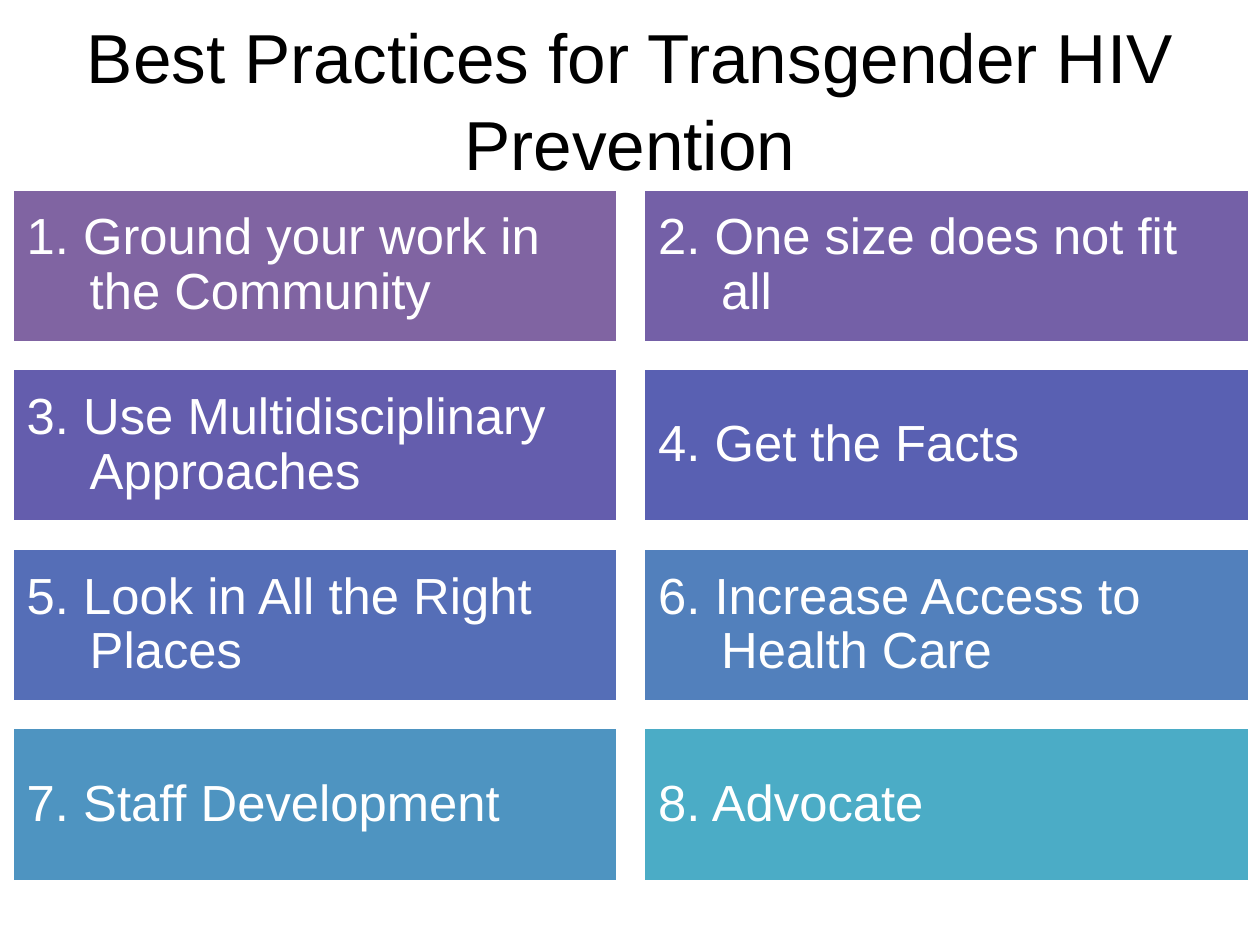
from dataclasses import dataclass

from pptx import Presentation
from pptx.dml.color import RGBColor
from pptx.enum.shapes import MSO_SHAPE
from pptx.enum.text import MSO_ANCHOR, MSO_AUTO_SIZE, PP_ALIGN
from pptx.slide import Slide
from pptx.util import Cm, Pt

RECTANGLE = MSO_SHAPE.RECTANGLE
MIDDLE = MSO_ANCHOR.MIDDLE
NO_AUTOFIT = MSO_AUTO_SIZE.NONE
CENTER, LEFT = PP_ALIGN.CENTER, PP_ALIGN.LEFT

COLORS = {
    "title": "000000",
    "white": "FFFFFF",
    "community": "8064A2",
    "size": "7460A7",
    "approaches": "645DAD",
    "facts": "5960B2",
    "places": "556EB7",
    "access": "5280BC",
    "staff": "4E94C1",
    "advocate": "4BACC6",
}

PRACTICES = [
    ("1. Ground your work in the Community", "community"),
    ("2. One size does not fit all", "size"),
    ("3. Use Multidisciplinary Approaches", "approaches"),
    ("4. Get the Facts", "facts"),
    ("5. Look in All the Right Places", "places"),
    ("6. Increase Access to Health Care", "access"),
    ("7. Staff Development", "staff"),
    ("8. Advocate", "advocate"),
]

COLUMNS = 2
GRID_LEFT, GRID_TOP = 0.24, 3.81
CARD_WIDTH, CARD_HEIGHT = 12.22, 3.1
COLUMN_STEP, ROW_STEP = 12.73, 3.62


@dataclass
class PracticeSlide:
    """Holds the style and the current slide, and adds its elements."""

    slide: Slide
    font: str = "Arial"
    title_size: float = 39.6
    card_size: float = 29
    card_inset: float = 0.3
    hanging: float = 1.27

    def add_text(self, paragraph, text, size, color, align, spacing):
        paragraph.alignment = align
        paragraph.line_spacing = spacing
        run = paragraph.add_run()
        run.text = text
        run.font.name = self.font
        run.font.size = Pt(size)
        run.font.color.rgb = RGBColor.from_string(COLORS[color])

    def title(self, text, width, height):
        heading = self.slide.shapes.title
        heading.left, heading.top = Cm(0), Cm(0)
        heading.width, heading.height = Cm(width), Cm(height)
        frame = heading.text_frame
        frame.word_wrap = True
        frame.auto_size = NO_AUTOFIT
        frame.vertical_anchor = MIDDLE
        self.add_text(frame.paragraphs[0], text, self.title_size, "title", CENTER, 1.04)

    def card(self, text, color, left, top):
        card = self.slide.shapes.add_shape(
            RECTANGLE, Cm(left), Cm(top), Cm(CARD_WIDTH), Cm(CARD_HEIGHT)
        )
        card.shadow.inherit = False
        card.fill.solid()
        card.fill.fore_color.rgb = RGBColor.from_string(COLORS[color])
        card.line.color.rgb = RGBColor.from_string(COLORS["white"])
        card.line.width = Pt(2)
        frame = card.text_frame
        frame.word_wrap = True
        frame.vertical_anchor = MIDDLE
        frame.margin_left = frame.margin_right = Cm(self.card_inset)
        frame.margin_top = frame.margin_bottom = Cm(self.card_inset)
        paragraph = frame.paragraphs[0]
        properties = paragraph._p.get_or_add_pPr()
        properties.set("marL", str(Cm(self.hanging)))
        properties.set("indent", str(-Cm(self.hanging)))
        self.add_text(paragraph, text, self.card_size, "white", LEFT, 0.9)


def main():
    presentation = Presentation()
    presentation.slide_width, presentation.slide_height = Cm(25.4), Cm(19.05)
    title_only = presentation.slide_layouts[5]
    page = PracticeSlide(presentation.slides.add_slide(title_only))
    page.title("Best Practices for Transgender HIV Prevention", 25.4, 3.94)
    for index, (practice, color) in enumerate(PRACTICES):
        row, column = divmod(index, COLUMNS)
        page.card(
            practice,
            color,
            GRID_LEFT + column * COLUMN_STEP,
            GRID_TOP + row * ROW_STEP,
        )
    presentation.save("out.pptx")


if __name__ == "__main__":
    main()
